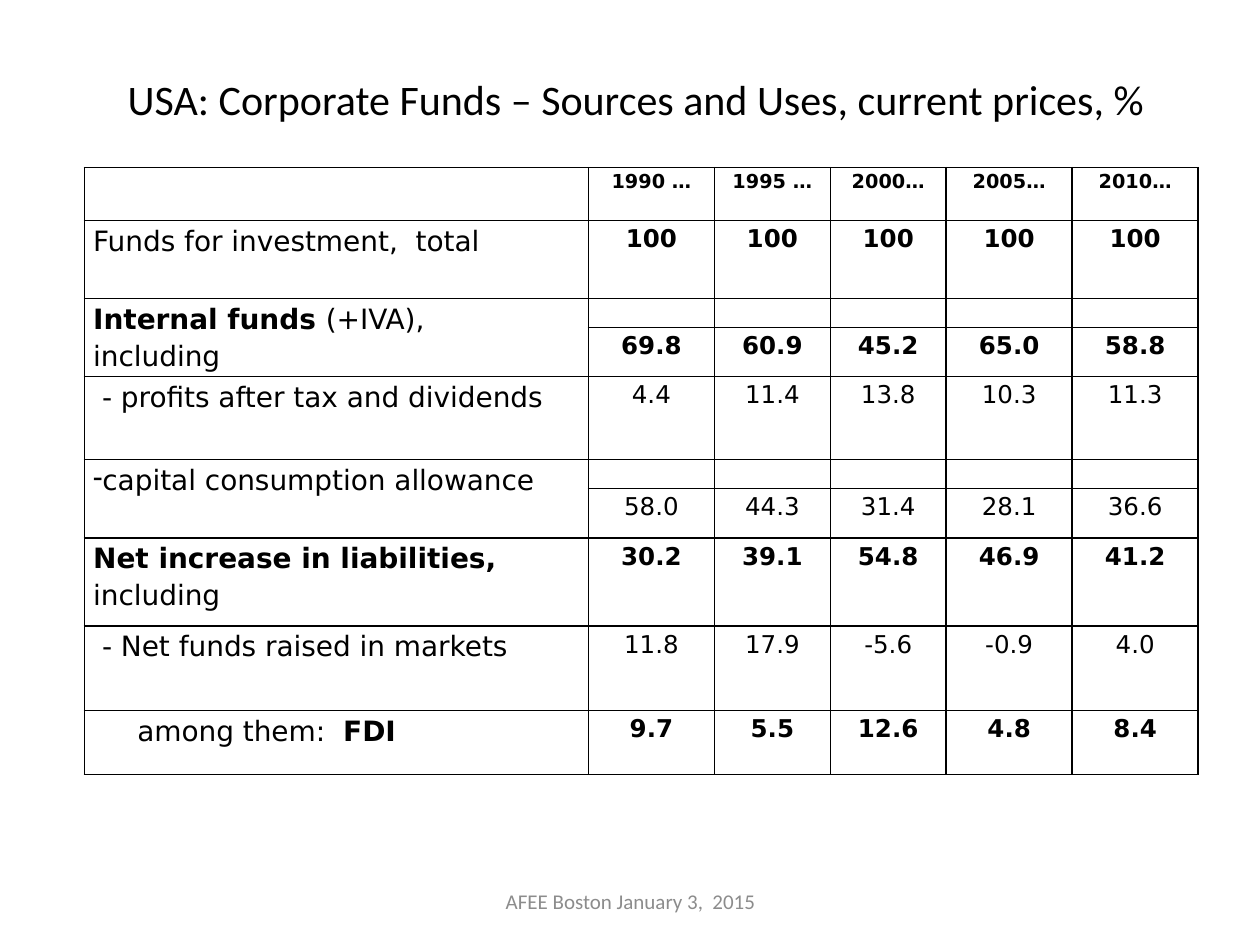
from lxml import etree
from pptx import Presentation
from pptx.dml.color import RGBColor
from pptx.enum import text as t
from pptx.oxml.ns import qn
from pptx.util import Inches, Pt

HUES = {"ink": "000000", "foot": "8C8C8C"}
SANS, BODY = "DejaVu Sans", "Calibri"
TITLE = "USA: Corporate Funds – Sources and Uses, current prices, % "
FOOT = "AFEE Boston January 3,  2015"
YEARS = ["1990 …", "1995 …", "2000…", "2005…", "2010…"]
COLS = [4, 1, 0.92, 0.92, 1, 1]

# label paragraphs hold (text, bold) runs; then values, bold values, row heights
ROWS = [
    ([[("Funds for investment,  total", False)]],
     ["100"] * 5, True, [0.62]),
    ([[("Internal funds ", True), ("(+IVA),", False)], [("including", False)]],
     ["69.8", "60.9", "45.2", "65.0", "58.8"], True, [0.23, 0.39]),
    ([[(" - profits after tax and dividends", False)]],
     ["4.4", "11.4", "13.8", "10.3", "11.3"], False, [0.66]),
    ([[("capital consumption allowance", False)]],
     ["58.0", "44.3", "31.4", "28.1", "36.6"], False, [0.23, 0.39]),
    ([[("Net increase in liabilities, ", True), ("including", False)]],
     ["30.2", "39.1", "54.8", "46.9", "41.2"], True, [0.7]),
    ([[(" - Net funds raised in markets", False)]],
     ["11.8", "17.9", "-5.6", "-0.9", "4.0"], False, [0.67]),
    ([[("among them:  ", False), ("FDI", True)]],
     ["9.7", "5.5", "12.6", "4.8", "8.4"], True, [0.51]),
]
HEAD = 0.42
DASHED, INSET = 3, 6


def write(frame, paras, size, face, hue="ink", mid=False, lead=1.0):
    for i, runs in enumerate(paras):
        para = frame.paragraphs[0] if i == 0 else frame.add_paragraph()
        para.alignment = t.PP_ALIGN.CENTER if mid else t.PP_ALIGN.LEFT
        para.line_spacing = lead
        for words, bold in runs:
            run = para.add_run()
            run.text = words
            font = run.font
            font.size, font.name, font.bold = Pt(size), face, bold
            font.color.rgb = RGBColor.from_string(HUES[hue])


def label(slide, box, words, size, hue):
    frame = slide.shapes.add_textbox(*map(Inches, box)).text_frame
    frame.word_wrap = True
    frame.vertical_anchor = t.MSO_ANCHOR.MIDDLE
    write(frame, [[(words, False)]], size, BODY, hue, True)


def style(cell):
    cell.margin_left = cell.margin_right = Inches(0.07)
    cell.margin_top = cell.margin_bottom = 0
    props = cell._tc.get_or_add_tcPr()
    for side in ("lnL", "lnR", "lnT", "lnB"):
        line = etree.SubElement(props, qn("a:" + side), w=str(Pt(1)))
        fill = etree.SubElement(line, qn("a:solidFill"))
        etree.SubElement(fill, qn("a:srgbClr"), val=HUES["ink"])
    cell.fill.background()
    if not cell.text_frame.text:
        para = cell.text_frame.paragraphs[0]._p
        etree.SubElement(para, qn("a:endParaRPr"), sz="800")


def fill_row(grid, row, values, size, bold):
    for col, value in enumerate(values, 1):
        write(grid.cell(row, col).text_frame, [[(value, bold)]],
              size, SANS, mid=True, lead=1.15)


def build_grid(slide):
    highs = [HEAD] + [h for *_, part in ROWS for h in part]
    box = (0.67, 1.33, sum(COLS), sum(highs))
    grid = slide.shapes.add_table(
        len(highs), len(COLS), *map(Inches, box)).table
    grid.first_row = grid.horz_banding = False
    for col, wide in zip(grid.columns, COLS):
        col.width = Inches(wide)
    for row, high in zip(grid.rows, highs):
        row.height = Inches(high)

    fill_row(grid, 0, YEARS, 11, True)
    top = 1
    for i, (paras, values, bold, part) in enumerate(ROWS):
        low = top + len(part) - 1
        cell = grid.cell(top, 0)
        if low > top:
            cell.merge(grid.cell(low, 0))
        write(cell.text_frame, paras, 16, SANS, lead=1.15)
        props = cell.text_frame.paragraphs[0]._p.get_or_add_pPr()
        if i == DASHED:
            etree.SubElement(props, qn("a:buChar"), char="-")
        if i == INSET:
            props.set("marL", str(Inches(0.35)))
        fill_row(grid, low, values, 14, bold)
        top = low + 1
    for cell in grid.iter_cells():
        style(cell)


def main():
    deck = Presentation()
    deck.slide_width, deck.slide_height = Inches(10), Inches(7.5)
    slide = deck.slides.add_slide(deck.slide_layouts[6])
    label(slide, (0.5, 0, 9.17, 1.57), TITLE, 24, "ink")
    label(slide, (3.42, 6.95, 3.17, 0.4), FOOT, 12, "foot")
    build_grid(slide)
    deck.save("out.pptx")


if __name__ == "__main__":
    main()
